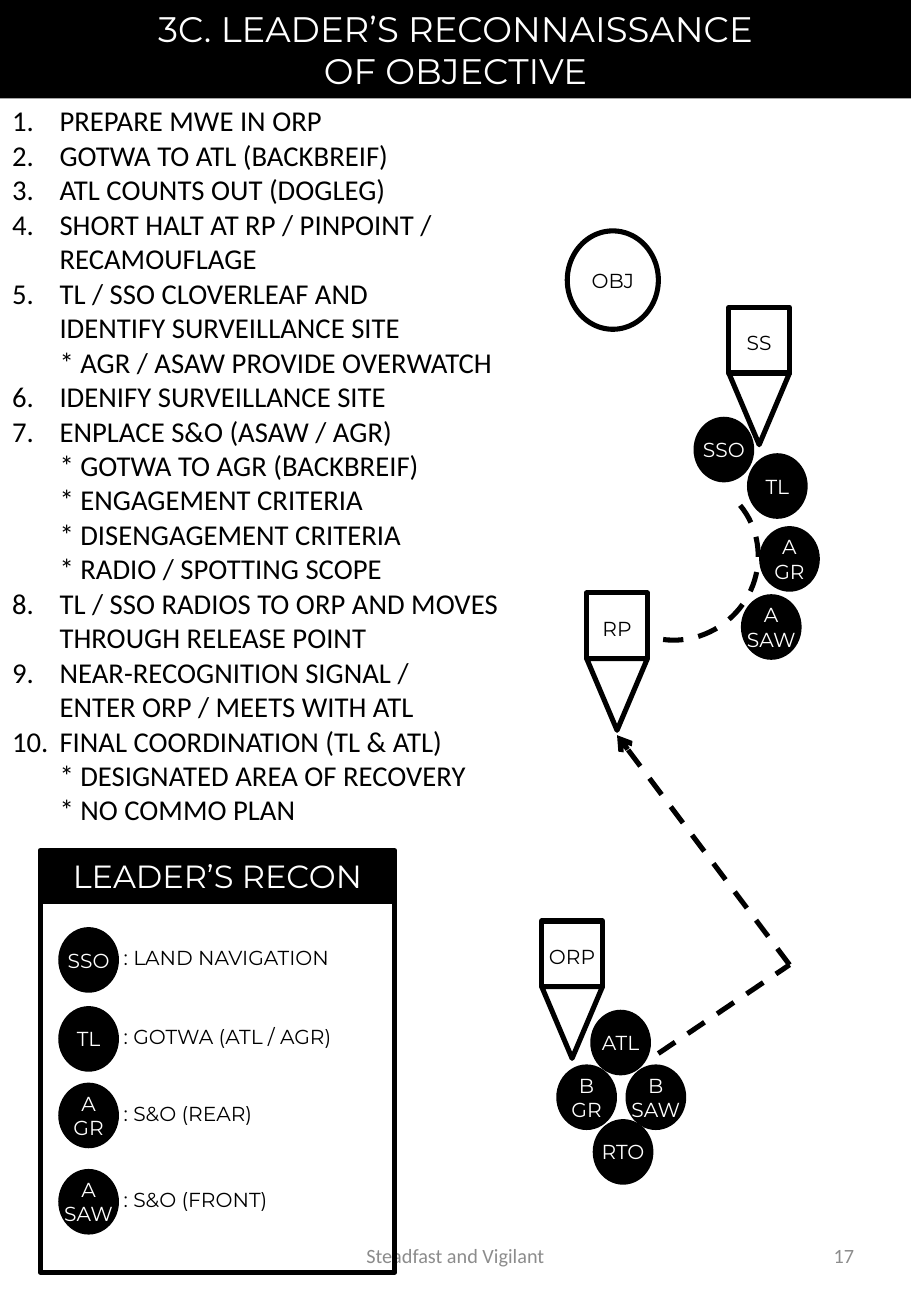
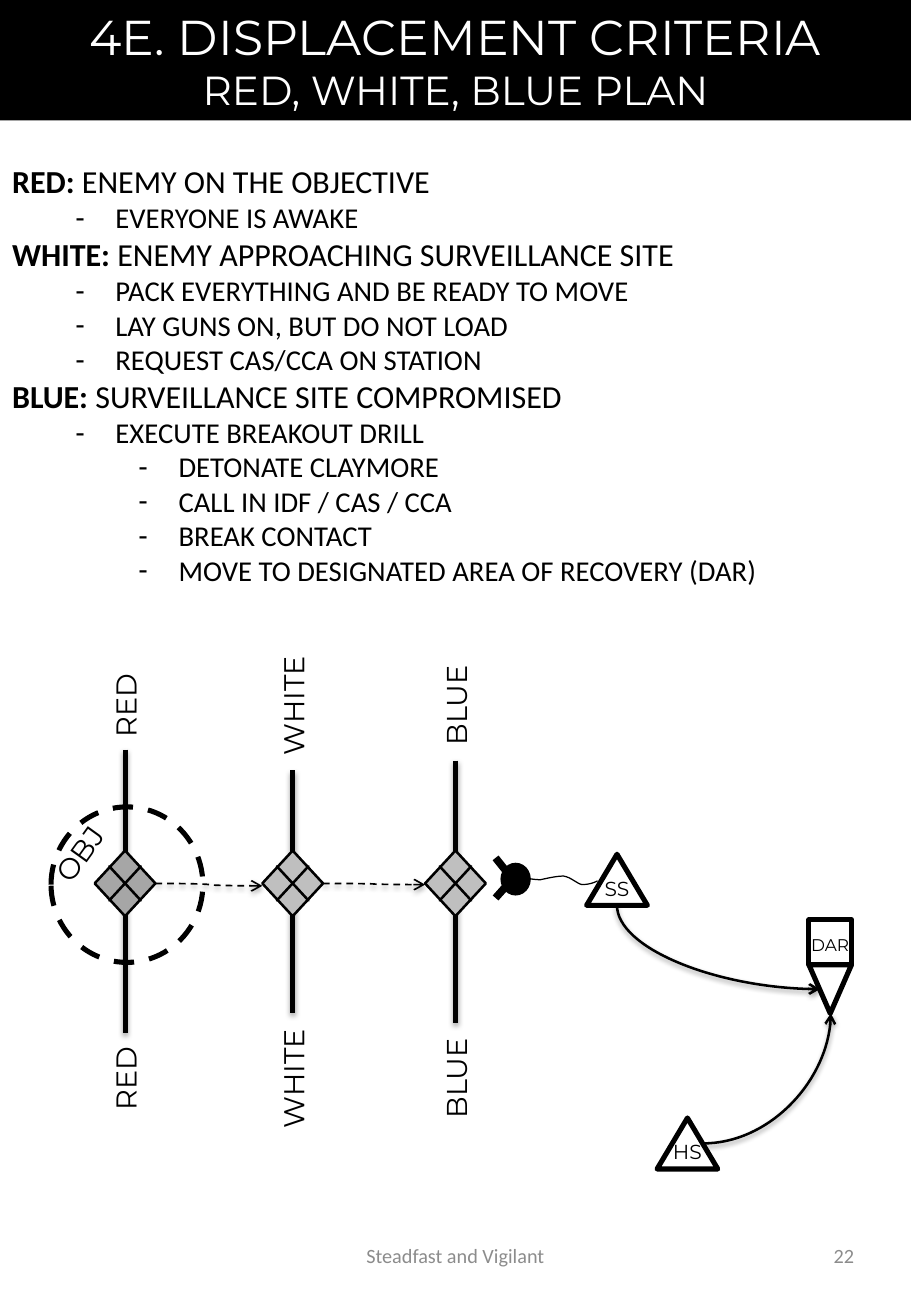
"""Build two patrol handbook slides with shared bands, lists and map symbols."""
from copy import deepcopy
from dataclasses import dataclass

from lxml.etree import SubElement
from pptx import Presentation
from pptx.dml.color import RGBColor
from pptx.enum.dml import MSO_LINE
from pptx.enum.shapes import MSO_CONNECTOR as Link, MSO_SHAPE as Preset
from pptx.enum.text import MSO_ANCHOR as Anchor, MSO_AUTO_SIZE, PP_ALIGN as Align
from pptx.oxml.ns import qn
from pptx.util import Emu, Pt

SCALE = 9144


def px(length):
    return Emu(round(length * SCALE))


@dataclass(frozen=True)
class Theme:
    """Colours, fonts and type sizes of the deck."""
    ink: str = "000000"
    paper: str = "FFFFFF"
    muted: str = "8C8C8C"
    dark_gray: str = "A6A6A6"
    light_gray: str = "BFBFBF"
    display: str = "Montserrat"
    text: str = "Calibri"
    title: int = 29
    subtitle: int = 24
    compact_title: int = 21
    heading: int = 19
    body: int = 17
    label: int = 12
    small: int = 10
    stroke: float = 3


class Board:
    """Holds the theme and the current slide and draws its elements."""

    def __init__(self, deck, theme):
        self.deck = deck
        self.theme = theme
        self.slide = None

    def style(self, run, size, color=None, font=None, bold=False):
        run.font.size = Pt(size)
        run.font.name = font or self.theme.display
        run.font.bold = bold
        run.font.color.rgb = RGBColor.from_string(color or self.theme.ink)

    def style_breaks(self, para):
        for line_break in para._p.findall(qn("a:br")):
            line_break.append(deepcopy(para.runs[0]._r.rPr))

    def fill_text(self, frame, text, size, color=None, font=None, align=Align.CENTER):
        frame.text = text
        for para in frame.paragraphs:
            para.alignment = align
            for run in para.runs:
                self.style(run, size, color, font)

    def place(self, shape, x, y, width, height):
        shape.left, shape.top = px(x), px(y)
        shape.width, shape.height = px(width), px(height)

    def page(self, number, height, title_lines):
        theme = self.theme
        self.slide = self.deck.slides.add_slide(self.deck.slide_layouts[1])
        title = self.slide.shapes.title
        self.place(title, 0, 0, 750, height)
        title.fill.solid()
        title.fill.fore_color.rgb = RGBColor.from_string(theme.ink)
        title.text_frame.auto_size = MSO_AUTO_SIZE.NONE
        title.text_frame.vertical_anchor = Anchor.MIDDLE
        para = title.text_frame.paragraphs[0]
        para.text = "\n".join(line for line, _ in title_lines)
        para.alignment = Align.CENTER
        for run, (_, size) in zip(para.runs, title_lines):
            self.style(run, size, theme.paper)
        self.style_breaks(para)
        for x, width, text, align in ((256, 238, "Steadfast and Vigilant", Align.CENTER),
                                      (538, 175, str(number), Align.RIGHT)):
            box = self.label(x, 1004, width, 58, text, theme.label, theme.muted, theme.text, align)
            box.text_frame.word_wrap = True
            box.text_frame.vertical_anchor = Anchor.MIDDLE

    def bullets(self, x, y, width, height, items):
        theme = self.theme
        body = self.slide.placeholders[1]
        self.place(body, x, y, width, height)
        frame = body.text_frame
        frame.auto_size = MSO_AUTO_SIZE.NONE
        frame.word_wrap = True
        frame.vertical_anchor = Anchor.TOP
        for index, (kind, lead, text) in enumerate(items):
            para = frame.paragraphs[0] if index == 0 else frame.add_paragraph()
            margin, indent, level, tag, attributes = BULLETS[kind]
            size = theme.heading if kind == "heading" else theme.body
            para.text = lead or text
            for run in para.runs:
                self.style(run, size, font=theme.text, bold=bool(lead))
            if lead:
                run = para.add_run()
                run.text = text
                self.style(run, size, font=theme.text)
            self.style_breaks(para)
            para.level = level
            para.alignment = Align.LEFT
            para.space_before = para.space_after = Pt(0)
            para.line_spacing = 1.0
            properties = para._p.get_or_add_pPr()
            properties.set("marL", str(px(margin)))
            properties.set("indent", str(px(indent)))
            SubElement(properties, qn(tag), attributes)

    def shape(self, preset, x, y, width, height, fill=None, line=None, dashed=False, turn=0):
        shape = self.slide.shapes.add_shape(preset, px(x), px(y), px(width), px(height))
        shape.shadow.inherit = False
        shape.rotation = turn
        if fill:
            shape.fill.solid()
            shape.fill.fore_color.rgb = RGBColor.from_string(fill)
        else:
            shape.fill.background()
        if line:
            self.stroke(shape.line, line, dashed)
        else:
            shape.line.fill.background()
        return shape

    def stroke(self, line, width, dashed=False):
        line.width = Pt(width)
        line.color.rgb = RGBColor.from_string(self.theme.ink)
        if dashed:
            line.dash_style = MSO_LINE.DASH

    def inscribe(self, shape, text, size, color=None, top=0):
        frame = shape.text_frame
        frame.word_wrap = False
        frame.vertical_anchor = Anchor.MIDDLE
        frame.margin_left = frame.margin_right = frame.margin_bottom = 0
        frame.margin_top = px(top)
        self.fill_text(frame, text, size, color)

    def label(self, x, y, width, height, text, size, color=None, font=None,
              align=Align.CENTER, turn=0):
        box = self.slide.shapes.add_textbox(px(x), px(y), px(width), px(height))
        box.rotation = turn
        box.text_frame.word_wrap = False
        self.fill_text(box.text_frame, text, size, color, font, align)
        return box

    def badge(self, x, y, text):
        circle = self.shape(Preset.OVAL, x, y, 50, 54, self.theme.ink)
        self.inscribe(circle, text, self.theme.label, self.theme.paper)

    def marker(self, x, y, width, side, point, text, size):
        theme = self.theme
        self.shape(Preset.ISOSCELES_TRIANGLE, x, y + side, width, point,
                   theme.paper, theme.stroke, turn=180)
        square = self.shape(Preset.RECTANGLE, x, y, width, side, theme.paper, theme.stroke)
        self.inscribe(square, text, size, top=4)

    def post(self, x, y, text):
        self.shape(Preset.ISOSCELES_TRIANGLE, x, y, 50, 42, line=self.theme.stroke)
        self.label(x + 2, y + 13, 46, 30, text, self.theme.label)

    def connect(self, begin, end, width, kind=Link.STRAIGHT, dashed=False,
                arrow=False, shadow=False):
        link = self.slide.shapes.add_connector(kind, *map(px, (*begin, *end)))
        self.stroke(link.line, width, dashed)
        properties = link._element.spPr
        if arrow:
            SubElement(properties.get_or_add_ln(), qn("a:tailEnd"), type="arrow")
        if not shadow:
            SubElement(properties, qn("a:effectLst"))
        return link

    def bend(self, begin, end, upright=False):
        if upright:
            (left, top), (right, bottom) = begin, end
            middle_x, middle_y = (left + right) / 2, (top + bottom) / 2
            half_x, half_y = (right - left) / 2, (bottom - top) / 2
            begin = middle_x + half_y, middle_y - half_x
            end = middle_x - half_y, middle_y + half_x
        link = self.connect(begin, end, 1.5, Link.CURVE, arrow=True, shadow=True)
        properties = link._element.spPr
        properties.find(qn("a:prstGeom")).set("prst", "curvedConnector2")
        if upright:
            properties.find(qn("a:xfrm")).set("rot", str(270 * 60000))

    def wire(self, knots, width, steps=8):
        points = []
        for first in range(0, len(knots) - 1, 3):
            for step in range(1, steps + 1):
                t = step / steps
                weights = (1 - t) ** 3, 3 * t * (1 - t) ** 2, 3 * t * t * (1 - t), t ** 3
                points.append(tuple(px(sum(weight * knot[axis] for weight, knot
                                           in zip(weights, knots[first:first + 4])))
                                    for axis in (0, 1)))
        builder = self.slide.shapes.build_freeform(px(knots[0][0]), px(knots[0][1]))
        builder.add_line_segments(points, close=False)
        curve = builder.convert_to_shape()
        curve.shadow.inherit = False
        curve.fill.background()
        self.stroke(curve.line, width)


BULLETS = {
    "number": (39, -39, 0, "a:buAutoNum", {"type": "arabicPeriod"}),
    "heading": (0, 0, 0, "a:buNone", {}),
    "dash": (85, -33, 1, "a:buChar", {"char": "-"}),
    "subdash": (137, -33, 2, "a:buChar", {"char": "-"}),
}
RECON_STEPS = (
    "PREPARE MWE IN ORP",
    "GOTWA TO ATL (BACKBREIF)",
    "ATL COUNTS OUT (DOGLEG)",
    "SHORT HALT AT RP / PINPOINT /\nRECAMOUFLAGE",
    "TL / SSO CLOVERLEAF AND\nIDENTIFY SURVEILLANCE SITE\n* AGR / ASAW PROVIDE OVERWATCH",
    "IDENIFY SURVEILLANCE SITE",
    "ENPLACE S&O (ASAW / AGR)\n* GOTWA TO AGR (BACKBREIF)\n* ENGAGEMENT CRITERIA\n"
    "* DISENGAGEMENT CRITERIA\n* RADIO / SPOTTING SCOPE",
    "TL / SSO RADIOS TO ORP AND MOVES\nTHROUGH RELEASE POINT",
    "NEAR-RECOGNITION SIGNAL /\nENTER ORP / MEETS WITH ATL",
    "FINAL COORDINATION (TL & ATL)\n* DESIGNATED AREA OF RECOVERY\n* NO COMMO PLAN",
)
PLAN = (
    ("heading", "RED: ", "ENEMY ON THE OBJECTIVE"),
    ("dash", "", "EVERYONE IS AWAKE"),
    ("heading", "WHITE:", " ENEMY APPROACHING SURVEILLANCE SITE"),
    ("dash", "", "PACK EVERYTHING AND BE READY TO MOVE"),
    ("dash", "", "LAY GUNS ON, BUT DO NOT LOAD"),
    ("dash", "", "REQUEST CAS/CCA ON STATION"),
    ("heading", "BLUE: ", "SURVEILLANCE SITE COMPROMISED"),
    ("dash", "", "EXECUTE BREAKOUT DRILL"),
    ("subdash", "", "DETONATE CLAYMORE"),
    ("subdash", "", "CALL IN IDF / CAS / CCA"),
    ("subdash", "", "BREAK CONTACT"),
    ("subdash", "", "MOVE TO DESIGNATED AREA OF RECOVERY (DAR)"),
)
TEAM = ((610, 489, "A\nSAW"), (625, 433, "A\nGR"), (486, 831, "ATL"), (571, 343, "SSO"),
        (515, 876, "B\nSAW"), (615, 373, "TL"), (488, 921, "RTO"), (458, 876, "B\nGR"))
LEGEND = ((763, "SSO", ": LAND NAVIGATION"), (828, "TL", ": GOTWA (ATL / AGR)"),
          (891, "A\nGR", ": S&O (REAR)"), (962, "A\nSAW", ": S&O (FRONT)"))


def draw_recon(board):
    theme = board.theme
    board.page(17, 81, (("3C. LEADER’S RECONNAISSANCE", theme.compact_title),
                        ("OF OBJECTIVE", theme.compact_title)))
    board.bullets(0, 80, 460, 611, [("number", "", step) for step in RECON_STEPS])
    board.connect((650, 794), (508, 605), theme.stroke, dashed=True, arrow=True)
    board.connect((542, 867), (650, 794), theme.stroke, dashed=True)
    arc = board.shape(Preset.ARC, 488, 393, 137, 133, line=theme.stroke, dashed=True, turn=140)
    arc.adjustments[0] = 108.25
    arc.adjustments[1] = 0
    for x, y, text in ((600, 253, "SS"), (483, 488, "RP"), (446, 758, "ORP")):
        board.marker(x, y, 50, 54, 59, text, theme.label)
    for x, y, text in TEAM:
        board.badge(x, y, text)
    objective = board.shape(Preset.OVAL, 467, 190, 75, 81, line=theme.stroke)
    board.inscribe(objective, "OBJ", theme.label)
    board.shape(Preset.RECTANGLE, 33, 740, 292, 307, line=theme.stroke)
    header = board.shape(Preset.RECTANGLE, 33, 700, 292, 42, theme.ink, theme.stroke)
    board.inscribe(header, "LEADER’S RECON", theme.heading, theme.paper)
    for y, role, duty in LEGEND:
        board.badge(48, y, role)
        board.label(92, y + 10, 225, 30, duty, theme.label, align=Align.LEFT).text_frame.word_wrap = True


def draw_displacement(board):
    theme = board.theme
    board.page(22, 99, (("4E. DISPLACEMENT CRITERIA", theme.title),
                        ("RED, WHITE, BLUE PLAN", theme.subtitle)))
    board.bullets(0, 128, 750, 418, PLAN)
    board.shape(Preset.OVAL, 42, 664, 125, 128, line=theme.stroke, dashed=True)
    board.label(28, 683, 75, 39, "OBJ", theme.body, turn=305.6)
    for name, x, top, bottom, width, fill in (("RED", 103, 617, 850, 75, theme.dark_gray),
                                              ("WHITE", 241, 634, 834, 107, theme.light_gray),
                                              ("BLUE", 375, 626, 842, 91, theme.light_gray)):
        for y in (561, 868):
            board.label(x - width // 2, y, width, 39, name, theme.body, turn=270)
        board.connect((x, top), (x, bottom), theme.stroke, shadow=True)
        board.shape(Preset.DIAMOND, x - 25, 700, 50, 54, fill, 1.5)
        cross = board.shape(Preset.MATH_MULTIPLY, x - 25, 700, 50, 54, fill, 1.5)
        cross.adjustments[0] = 0
    for begin, end in (((128, 727), (216, 729)), ((266, 727), (350, 728))):
        board.connect(begin, end, 1, Link.CURVE, dashed=True, arrow=True, shadow=True)
    board.shape(Preset.OVAL, 412, 710, 25, 27, theme.ink)
    for near, far in ((716, 706), (730, 739)):
        board.connect((416, near), (408, far), 4.5)
    board.wire(((492, 725), (488, 727), (484, 728), (479, 728), (475, 727), (470, 722), (464, 721),
                (458, 721), (450, 723), (445, 724), (440, 724), (435, 723), (435, 723)), 0.75)
    board.marker(666, 757, 35, 37, 40, "DAR", theme.small)
    board.post(483, 703, "SS")
    board.post(541, 920, "HS")
    board.bend((508, 745), (675, 814), upright=True)
    board.bend((579, 941), (684, 834))


def main():
    deck = Presentation()
    deck.slide_width, deck.slide_height = px(750), px(1083)
    board = Board(deck, Theme())
    draw_recon(board)
    draw_displacement(board)
    deck.save("out.pptx")


if __name__ == "__main__":
    main()
